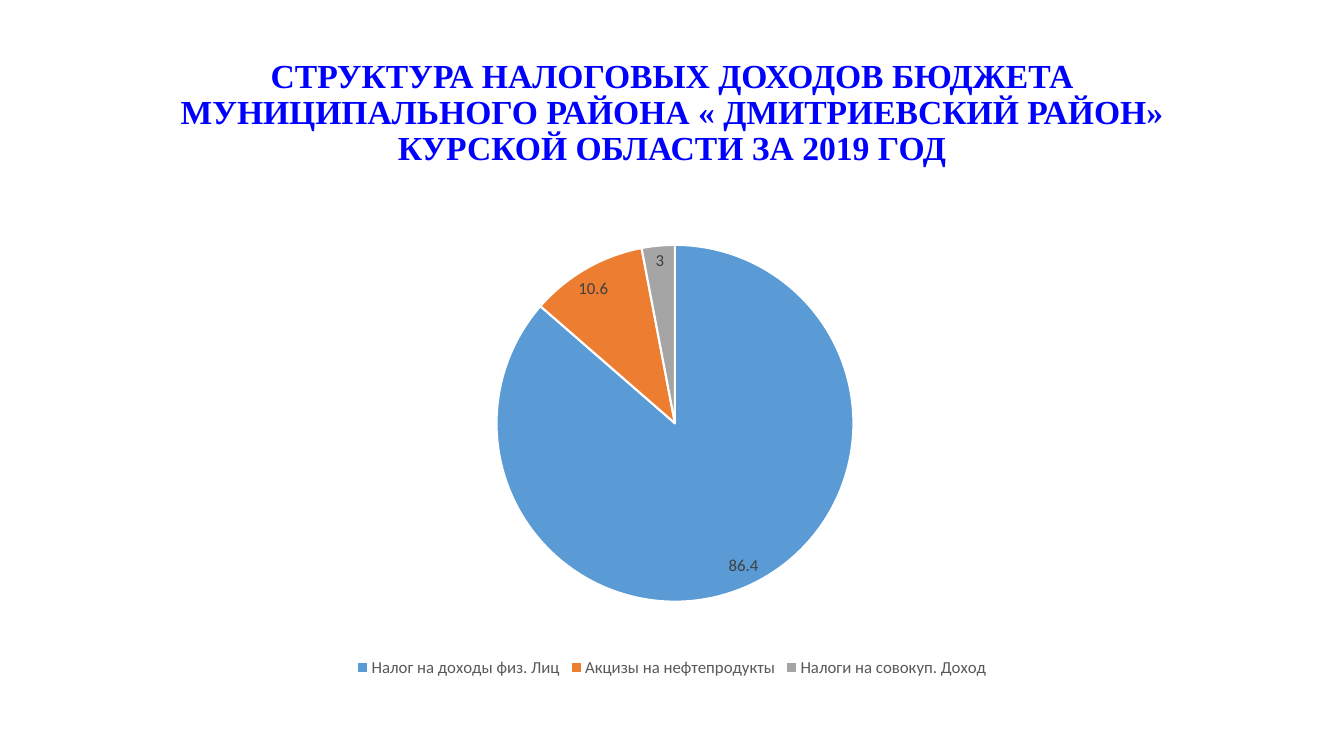
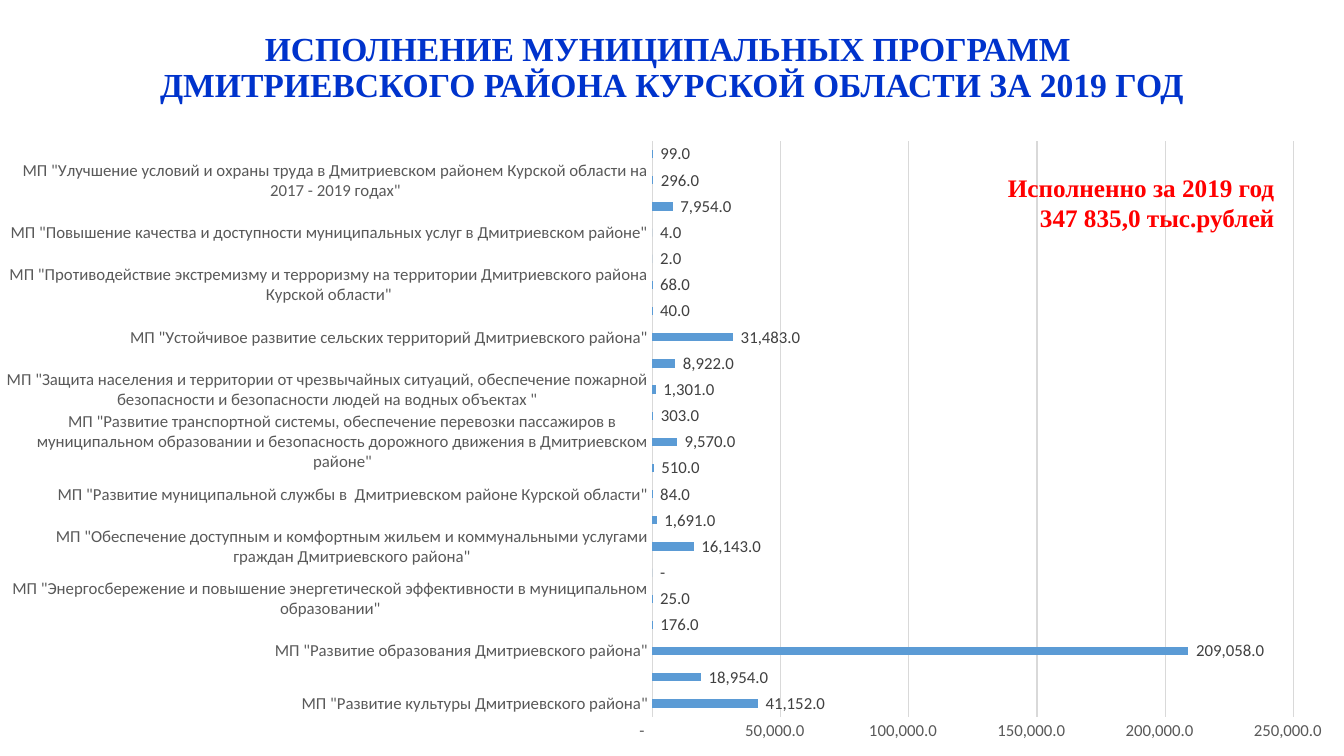
"""Build two slides on the 2019 district budget: tax revenue and programmes."""
import pptx
import pptx.chart.data
import pptx.dml.color
import pptx.enum.chart
import pptx.enum.text
import pptx.oxml
import pptx.oxml.ns
import pptx.util

WIDTH, HEIGHT = 13.33, 7.5
MARGIN = 0.92
SERIF, SANS = "Times New Roman", "Calibri"
BLUE, ORANGE, GREY = "5B9BD5", "ED7D31", "A5A5A5"
AXIS_TEXT, LABEL_TEXT, GRID = "595959", "404040", "D9D9D9"
AMOUNT_FORMAT = r'_-* #,##0.0_р_._-;\-* #,##0.0_р_._-;_-* "-"?_р_._-;_-@_-'

REVENUE_TITLE = [
    "СТРУКТУРА НАЛОГОВЫХ ДОХОДОВ БЮДЖЕТА МУНИЦИПАЛЬНОГО РАЙОНА "
    "« ДМИТРИЕВСКИЙ РАЙОН» КУРСКОЙ ОБЛАСТИ ЗА 2019 ГОД",
]
REVENUE = [
    ("Налог на доходы физ. Лиц", 86.4, BLUE),
    ("Акцизы на нефтепродукты", 10.6, ORANGE),
    ("Налоги на совокуп. Доход", 3, GREY),
]
PROGRAMME_TITLE = [
    "ИСПОЛНЕНИЕ МУНИЦИПАЛЬНЫХ ПРОГРАММ ",
    "ДМИТРИЕВСКОГО РАЙОНА КУРСКОЙ ОБЛАСТИ ЗА 2019 ГОД",
]
PROGRAMME_PAIRS = [
    ("Развитие культуры Дмитриевского района", 41152, 18954),
    ("Развитие образования Дмитриевского района", 209058, 176),
    ("Энергосбережение и повышение энергетической эффективности "
     "в муниципальном образовании", 25, 0),
    ("Обеспечение доступным и комфортным жильем и коммунальными услугами "
     "граждан Дмитриевского района", 16143, 1691),
    ("Развитие муниципальной службы в  Дмитриевском районе Курской области",
     84, 510),
    ("Развитие транспортной системы, обеспечение перевозки пассажиров в "
     "муниципальном образовании и безопасность дорожного движения "
     "в Дмитриевском районе", 9570, 303),
    ("Защита населения и территории от чрезвычайных ситуаций, обеспечение "
     "пожарной безопасности и безопасности людей на водных объектах ",
     1301, 8922),
    ("Устойчивое развитие сельских территорий Дмитриевского района", 31483, 40),
    ("Противодействие экстремизму и терроризму на территории "
     "Дмитриевского района Курской области", 68, 2),
    ("Повышение качества и доступности муниципальных услуг "
     "в Дмитриевском районе", 4, 7954),
    ("Улучшение условий и охраны труда в Дмитриевском районем Курской области "
     "на 2017 - 2019 годах", 296, 99),
]
TOTAL = ["Исполненно за 2019 год", "347 835,0 тыс.рублей"]


def color(value):
    return pptx.dml.color.RGBColor.from_string(value)


def place(*lengths):
    return [pptx.util.Inches(length) for length in lengths]


def style(font, size, tint, name=SANS, bold=False):
    font.size = pptx.util.Pt(size)
    font.color.rgb = color(tint)
    font.name = name
    font.bold = bold


def add_text(slide, area, lines, size, tint, align, spacing=1.0, right=0.1):
    box = slide.shapes.add_textbox(*place(*area))
    frame = box.text_frame
    frame.word_wrap = True
    frame.margin_right = pptx.util.Inches(right)
    para = frame.paragraphs[0]
    para.alignment = align
    para.line_spacing = spacing
    for index, line in enumerate(lines):
        if index:
            para.add_line_break()
        span = para.add_run()
        span.text = line
        style(span.font, size, tint, SERIF, True)
    return frame


def add_title(slide, top, height, lines, tint):
    area = (MARGIN, top, WIDTH - 2 * MARGIN, height)
    frame = add_text(slide, area, lines, 24, tint,
                     pptx.enum.text.PP_ALIGN.CENTER, 0.9)
    frame.vertical_anchor = pptx.enum.text.MSO_ANCHOR.MIDDLE


def set_plot_area(chart, area, inner):
    shares = [length / area[2 + index % 2] for index, length in enumerate(inner)]
    parts = [f'<c:{tag} val="{value}"/>' for tag, value in (
        ("layoutTarget", "inner"), ("xMode", "edge"), ("yMode", "edge"),
        *zip("xywh", shares))]
    layout = pptx.oxml.parse_xml(
        f'<c:layout {pptx.oxml.ns.nsdecls("c")}><c:manualLayout>'
        f'{"".join(parts)}</c:manualLayout></c:layout>')
    plot_area = chart.element.find(".//" + pptx.oxml.ns.qn("c:plotArea"))
    for old in plot_area.findall(pptx.oxml.ns.qn("c:layout")):
        plot_area.remove(old)
    plot_area.insert(0, layout)


def add_chart(slide, kind, area, inner, names, values, position, number_format):
    data = pptx.chart.data.CategoryChartData()
    data.categories = names
    data.add_series("Series 1", values)
    chart = slide.shapes.add_chart(kind, *place(*area), data).chart
    chart.has_title = False
    chart.has_legend = False
    style(chart.font, 10, "000000")
    set_plot_area(chart, area, inner)
    plot = chart.plots[0]
    plot.has_data_labels = True
    labels = plot.data_labels
    labels.show_value = True
    labels.show_percentage = False
    labels.position = position
    labels.number_format = number_format
    labels.number_format_is_linked = False
    style(labels.font, 12, LABEL_TEXT)
    return chart


def build_revenue(slide):
    add_title(slide, 0.4, 1.45, REVENUE_TITLE, "0000FF")
    names, values, tints = zip(*REVENUE)
    chart = add_chart(
        slide, pptx.enum.chart.XL_CHART_TYPE.PIE,
        (MARGIN, 2, WIDTH - 2 * MARGIN, 4.76), (0.9, 0.43, 9.75, 3.54),
        names, values, pptx.enum.chart.XL_LABEL_POSITION.BEST_FIT, "General")
    chart.has_legend = True
    chart.legend.position = pptx.enum.chart.XL_LEGEND_POSITION.BOTTOM
    chart.legend.include_in_layout = False
    style(chart.legend.font, 12, AXIS_TEXT)
    plot = chart.plots[0]
    plot.vary_by_categories = True
    for index, tint in enumerate(tints):
        wedge = plot.series[0].points[index].format
        wedge.fill.solid()
        wedge.fill.fore_color.rgb = color(tint)
        wedge.line.color.rgb = color("FFFFFF")
        wedge.line.width = pptx.util.Pt(1.5)


def build_programmes(slide):
    add_title(slide, 0, 1.36, PROGRAMME_TITLE, "0033CC")
    names, amounts = [], []
    for name, named_amount, unnamed_amount in PROGRAMME_PAIRS:
        names += [f'МП "{name}"', ""]
        amounts += [named_amount, unnamed_amount]
    chart = add_chart(
        slide, pptx.enum.chart.XL_CHART_TYPE.BAR_CLUSTERED,
        (0, 1.23, WIDTH, HEIGHT - 1.23), (6.47, 0.17, 6.36, 5.71),
        names, amounts, pptx.enum.chart.XL_LABEL_POSITION.OUTSIDE_END,
        AMOUNT_FORMAT)
    plot = chart.plots[0]
    plot.vary_by_categories = False
    plot.gap_width = 219
    bars = plot.series[0]
    bars.invert_if_negative = False
    bars.format.fill.solid()
    bars.format.fill.fore_color.rgb = color(BLUE)
    for axis in (chart.category_axis, chart.value_axis):
        axis.major_tick_mark = pptx.enum.chart.XL_TICK_MARK.NONE
        axis.minor_tick_mark = pptx.enum.chart.XL_TICK_MARK.NONE
        style(axis.tick_labels.font, 12, AXIS_TEXT)
    chart.value_axis.has_major_gridlines = True
    chart.value_axis.format.line.fill.background()
    chart.value_axis.tick_labels.number_format = AMOUNT_FORMAT
    chart.value_axis.tick_labels.number_format_is_linked = False
    for ruled in (chart.category_axis, chart.value_axis.major_gridlines):
        ruled.format.line.color.rgb = color(GRID)
        ruled.format.line.width = pptx.util.Pt(0.75)
    add_text(slide, (9.88, 1.66, 3, 1.01), TOTAL, 18, "FF0000",
             pptx.enum.text.PP_ALIGN.RIGHT, right=0.24)


def main():
    deck = pptx.Presentation()
    deck.slide_width, deck.slide_height = place(WIDTH, HEIGHT)
    for build in (build_revenue, build_programmes):
        build(deck.slides.add_slide(deck.slide_layouts[6]))
    deck.save("out.pptx")


if __name__ == "__main__":
    main()
